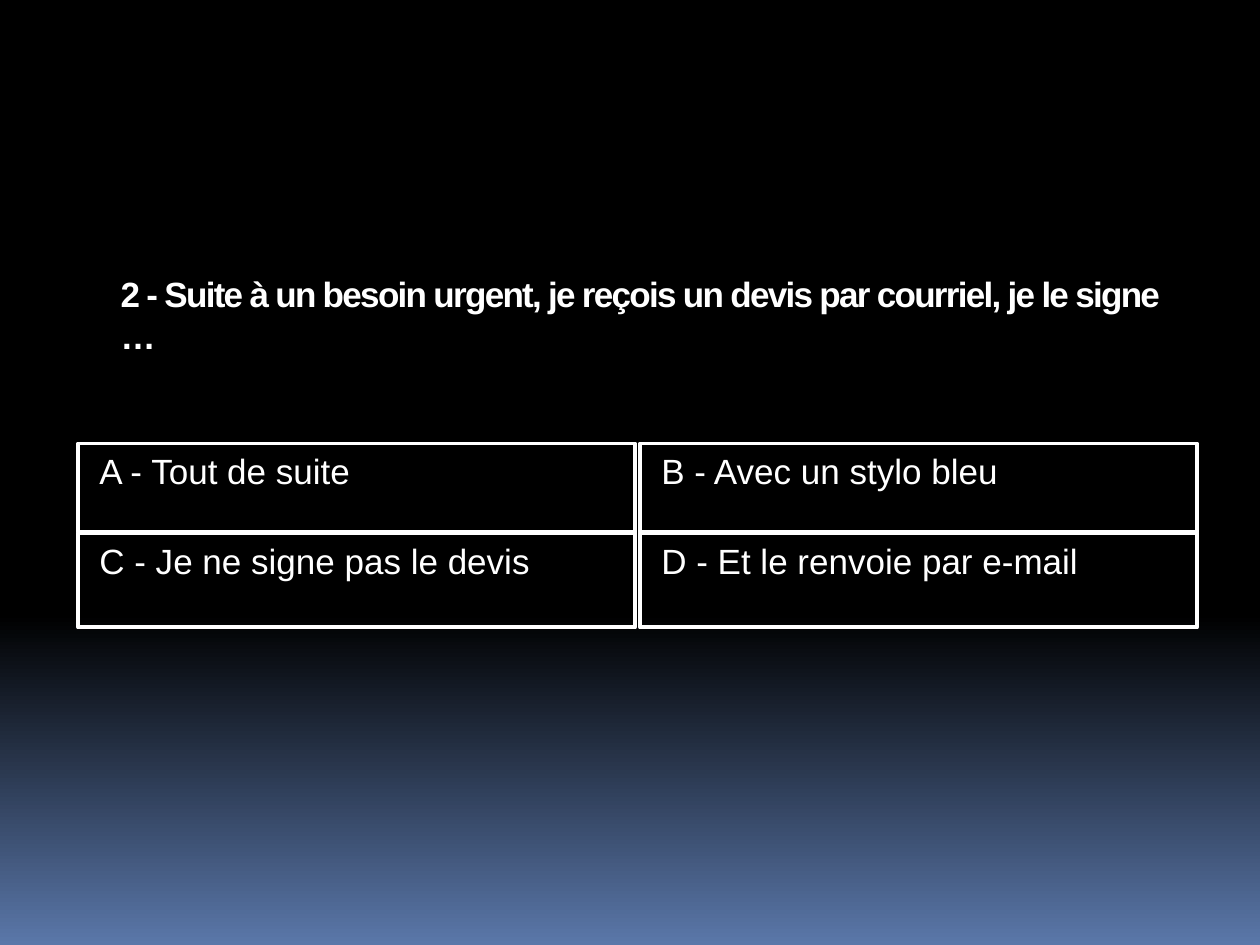
from pptx import Presentation
from pptx import util as u
from pptx.dml import color
from pptx.enum import shapes, text

COLORS = {"night": "000000", "dawn": "5A77A9", "white": "FFFFFF"}
WHITE = color.RGBColor.from_string(COLORS["white"])
FONT = {"name": "Arial", "size": u.Pt(20)}
FRAME = {"word_wrap": True, "vertical_anchor": text.MSO_ANCHOR.TOP}


def write(box, words, **extra):
    for name, value in FRAME.items():
        setattr(box.text_frame, name, value)
    para = box.text_frame.paragraphs[0]
    para.alignment = text.PP_ALIGN.LEFT
    span = para.add_run()
    span.text = words
    for name, value in {**FONT, **extra}.items():
        setattr(span.font, name, value)
    span.font.color.rgb = WHITE
    return para, span


deck = Presentation()
deck.slide_width, deck.slide_height = u.Inches(10), u.Inches(7.5)
page = deck.slides.add_slide(deck.slide_layouts[6])

sky = page.background.fill
sky.gradient()
sky.gradient_angle = 270
for stop, (position, name) in zip(sky.gradient_stops, [(0.65, "night"), (1, "dawn")]):
    stop.position = position
    stop.color.rgb = color.RGBColor.from_string(COLORS[name])

question = page.shapes.add_textbox(u.Inches(0.86), u.Inches(2.11), u.Inches(8.5), u.Inches(0.85))
para, span = write(
    question,
    "2 - Suite à un besoin urgent, je reçois un devis par courriel, je le signe …",
    bold=True,
)
span.font._element.set("spc", "-100")

columns = [0.62, 5.08]
rows = [
    (3.52, 0.7, ["A - Tout de suite", "B - Avec un stylo bleu"]),
    (4.23, 0.75, ["C - Je ne signe pas le devis", "D - Et le renvoie par e-mail"]),
]
for top, height, answers in rows:
    for left, answer in zip(columns, answers):
        box = page.shapes.add_shape(
            shapes.MSO_SHAPE.RECTANGLE,
            u.Inches(left), u.Inches(top), u.Inches(4.42), u.Inches(height),
        )
        box.shadow.inherit = False
        box.fill.background()
        box.line.color.rgb = WHITE
        box.line.width = u.Pt(2.25)
        para, span = write(box, answer)
        para.space_before = u.Pt(7)
        indents = para._p.get_or_add_pPr()
        indents.set("marL", str(u.Inches(0.45)))
        indents.set("indent", str(u.Inches(-0.38)))

deck.save("out.pptx")
